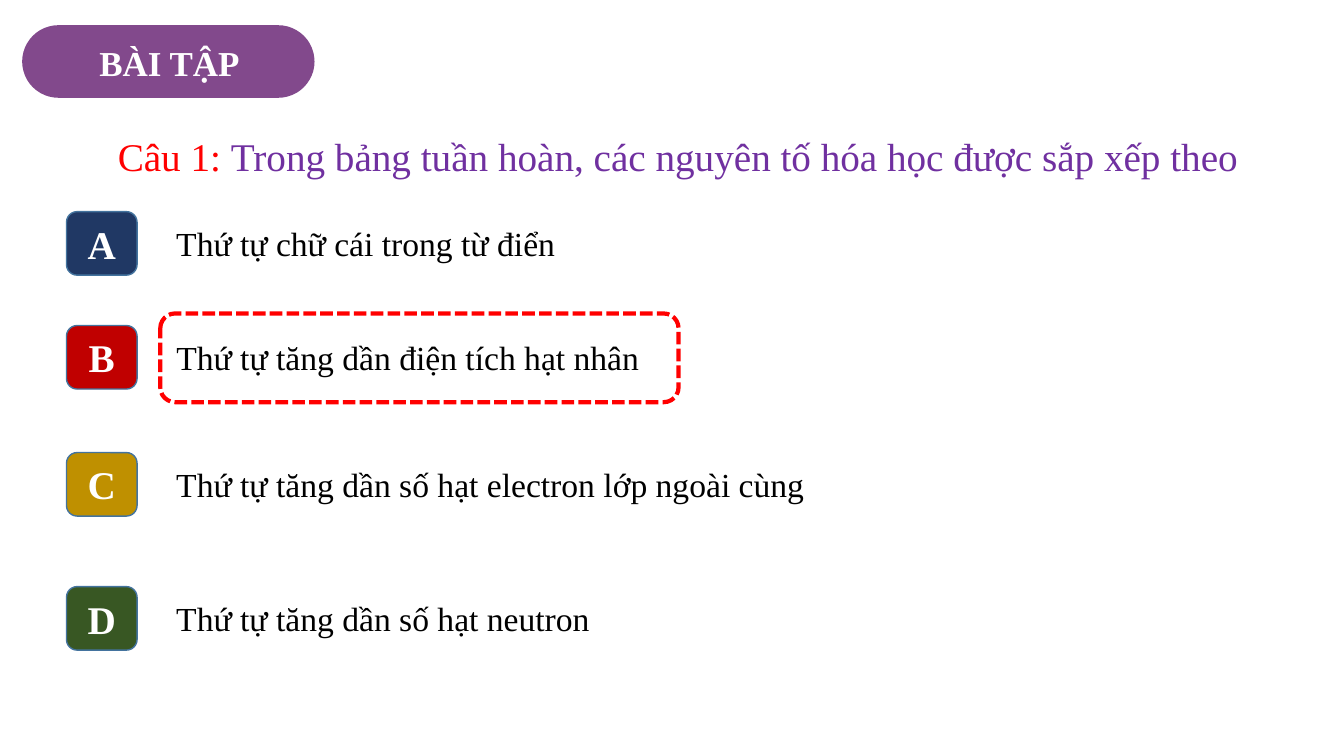
from dataclasses import dataclass

from pptx import Presentation
from pptx.dml.color import RGBColor
from pptx.enum.dml import MSO_LINE
from pptx.enum.shapes import MSO_SHAPE
from pptx.enum.text import MSO_ANCHOR, MSO_AUTO_SIZE, PP_ALIGN
from pptx.shapes.autoshape import Shape
from pptx.text.text import TextFrame
from pptx.util import Pt

PX = 9144  # EMU per px, 100 px to the inch
ROUND_RECT = MSO_SHAPE.ROUNDED_RECTANGLE
DASH = MSO_LINE.SQUARE_DOT  # sysDash in the file format
MIDDLE = MSO_ANCHOR.MIDDLE
GROW = MSO_AUTO_SIZE.SHAPE_TO_FIT_TEXT
LEFT, CENTER = PP_ALIGN.LEFT, PP_ALIGN.CENTER


@dataclass(frozen=True)
class Theme:
    font: str = "Times New Roman"
    heading_size: int = 25
    question_size: int = 28
    letter_size: int = 28
    answer_size: int = 24
    white: str = "FFFFFF"
    black: str = "000000"
    heading_fill: str = "82498C"
    red: str = "FF0000"
    purple: str = "7030A0"
    badge_line: str = "43739E"
    badge_a: str = "203864"
    badge_b: str = "C00000"
    badge_c: str = "BF9000"
    badge_d: str = "385723"


THEME = Theme()


@dataclass(frozen=True)
class Box:
    left: int
    top: int
    width: int
    height: int

    def emu(self) -> tuple[int, int, int, int]:
        return self.left * PX, self.top * PX, self.width * PX, self.height * PX


@dataclass(frozen=True)
class Span:
    text: str
    size: int
    color: str
    bold: bool = False


@dataclass(frozen=True)
class Answer:
    letter: str
    text: str
    color: str
    top: int
    text_width: int


ANSWERS = [
    Answer("A", "Thứ tự chữ cái trong từ điển", THEME.badge_a, 210, 403),
    Answer("B", "Thứ tự tăng dần điện tích hạt nhân", THEME.badge_b, 323, 562),
    Answer("C", "Thứ tự tăng dần số hạt electron lớp ngoài cùng", THEME.badge_c, 449, 656),
    Answer("D", "Thứ tự tăng dần số hạt neutron", THEME.badge_d, 582, 584),
]


def write(tf: TextFrame, spans: list[Span], align: PP_ALIGN) -> None:
    tf.word_wrap = True
    p = tf.paragraphs[0]
    p.alignment = align
    for span in spans:
        r = p.add_run()
        r.text = span.text
        r.font.name = THEME.font
        r.font.size = Pt(span.size)
        r.font.bold = span.bold
        r.font.color.rgb = RGBColor.from_string(span.color)


def add_text(shapes, box: Box, spans: list[Span], align: PP_ALIGN = LEFT) -> None:
    tf = shapes.add_textbox(*box.emu()).text_frame
    write(tf, spans, align)
    tf.auto_size = GROW


def add_round_rect(shapes, box: Box, fill: str = "", line: str = "", weight: int = 1) -> Shape:
    """Draw a rounded rectangle; an empty colour means no fill or no line."""
    sp = shapes.add_shape(ROUND_RECT, *box.emu())
    sp.shadow.inherit = False
    if fill:
        sp.fill.solid()
        sp.fill.fore_color.rgb = RGBColor.from_string(fill)
    else:
        sp.fill.background()
    if line:
        sp.line.color.rgb = RGBColor.from_string(line)
        sp.line.width = Pt(weight)
    else:
        sp.line.fill.background()
    return sp


def add_heading(shapes) -> None:
    group = shapes.add_group_shape().shapes
    pill = add_round_rect(group, Box(22, 25, 290, 72), THEME.heading_fill)
    pill.adjustments[0] = 0.5
    heading = Span("BÀI TẬP", THEME.heading_size, THEME.white, True)
    add_text(group, Box(66, 36, 204, 52), [heading], CENTER)


def add_answer(shapes, answer: Answer) -> None:
    badge = add_round_rect(shapes, Box(66, answer.top, 70, 63), answer.color, THEME.badge_line)
    badge.text_frame.vertical_anchor = MIDDLE
    write(badge.text_frame, [Span(answer.letter, THEME.letter_size, THEME.white, True)], CENTER)
    text_box = Box(165, answer.top + 6, answer.text_width, 50)
    add_text(shapes, text_box, [Span(answer.text, THEME.answer_size, THEME.black)])


def main() -> None:
    prs = Presentation()
    prs.slide_width, prs.slide_height = 1333 * PX, 750 * PX
    shapes = prs.slides.add_slide(prs.slide_layouts[6]).shapes

    add_heading(shapes)
    question = [
        Span("Câu 1: ", THEME.question_size, THEME.red),
        Span(
            "Trong bảng tuần hoàn, các nguyên tố hóa học được sắp xếp theo",
            THEME.question_size,
            THEME.purple,
        ),
    ]
    add_text(shapes, Box(107, 126, 1166, 57), question)
    for answer in ANSWERS:
        add_answer(shapes, answer)
    correct_frame = add_round_rect(shapes, Box(159, 311, 514, 88), line=THEME.red, weight=3)
    correct_frame.line.dash_style = DASH

    prs.save("out.pptx")


if __name__ == "__main__":
    main()
